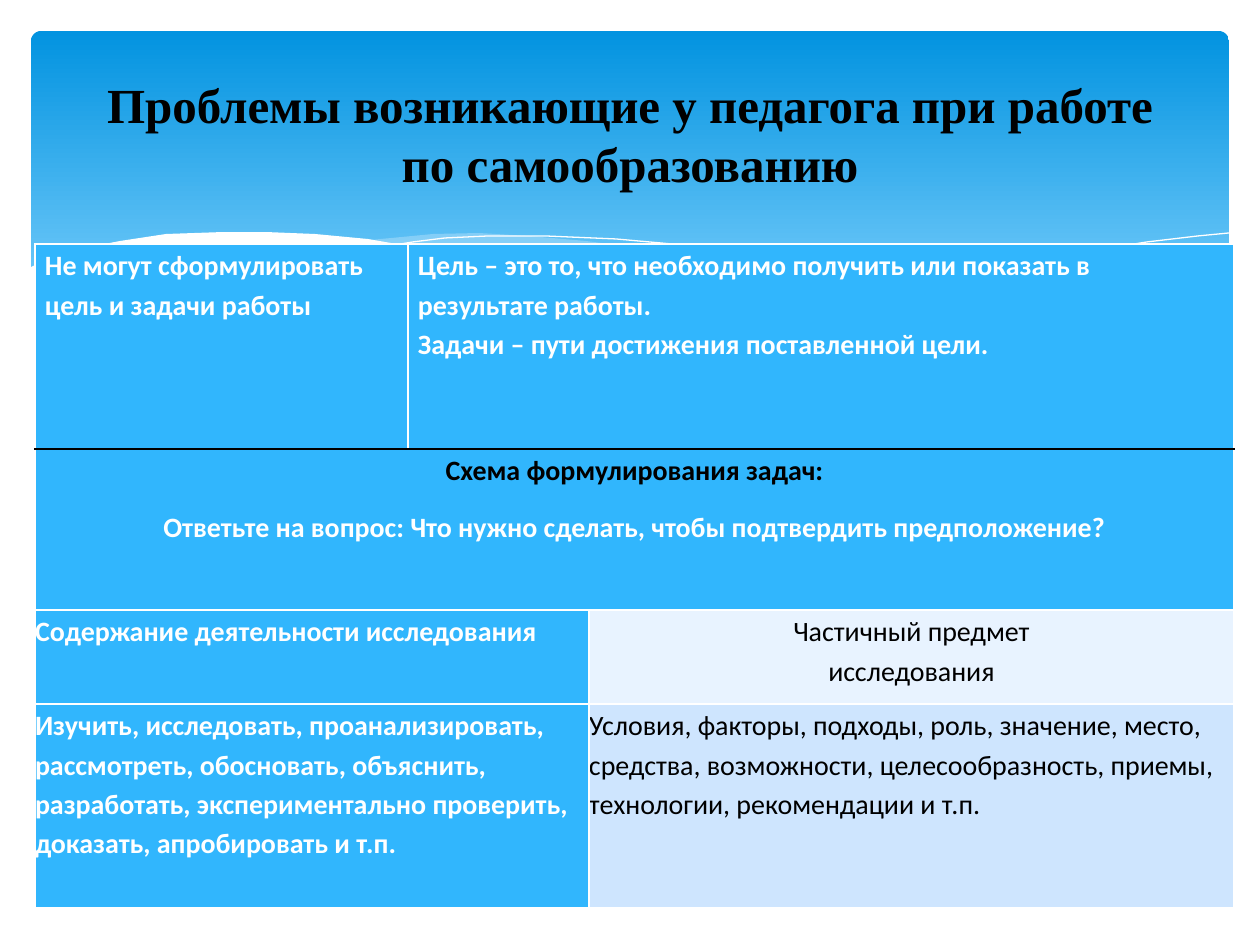
from lxml import etree
from pptx import Presentation
from pptx.dml.color import RGBColor
from pptx.enum.shapes import MSO_SHAPE
from pptx.enum.text import MSO_ANCHOR, PP_ALIGN
from pptx.oxml.ns import qn
from pptx.util import Pt

ROUND = MSO_SHAPE.ROUNDED_RECTANGLE
MIDDLE = MSO_ANCHOR.MIDDLE
LEFT, CENTER = PP_ALIGN.LEFT, PP_ALIGN.CENTER
PX = 914400 / 126
WHITE, BLACK, BLUE = "FFFFFF", "000000", "31B6FD"


def color(code):
    return RGBColor.from_string(code)


def emu(*vals):
    return [round(v * PX) for v in vals]


deck = Presentation()
deck.slide_width, deck.slide_height = emu(1260, 945)
slide = deck.slides.add_slide(deck.slide_layouts[6])
shapes = slide.shapes

# Gradient banner
band = shapes.add_shape(ROUND, *emu(31, 31, 1198, 340))
band.adjustments[0] = 0.03
band.shadow.inherit = False
band.line.fill.background()
band.fill.gradient()
band.fill.gradient_angle = 270
for stop, pos, code in zip(band.fill.gradient_stops, (0, 0.9), ("0293E0", "83D3FE")):
    stop.position = pos
    stop.color.rgb = color(code)

# Waves: points, fill, opacity in percent; no fill means an open white line
waves = [
    ([(1229, 252), (1160, 265), (1085, 281), (949, 312), (833, 334), (906, 343),
      (984, 349), (1063, 349), (1130, 340), (1187, 326), (1230, 311)], "C6E7FC", 29),
    ([(1125, 344), (1017, 328), (890, 302), (793, 280), (717, 262), (648, 249),
      (586, 241), (529, 236), (479, 233), (433, 234), (360, 241), (431, 251),
      (509, 266), (619, 292), (736, 318), (838, 335), (927, 346), (1003, 350),
      (1068, 349)], "C6E7FC", 40),
    ([(389, 246), (413, 242), (445, 238), (488, 236), (546, 236), (616, 239),
      (672, 244), (766, 257), (876, 276), (1002, 304), (1143, 343)], None, 100),
    ([(772, 324), (876, 296), (978, 272), (1091, 251), (1147, 242), (1198, 236),
      (1229, 233)], None, 100),
    ([(1231, 310), (1184, 326), (1103, 344), (1019, 349), (915, 343), (789, 325),
      (667, 301), (563, 277), (460, 255), (368, 239), (315, 234), (266, 232),
      (223, 232), (166, 234), (120, 241), (84, 248), (50, 258), (29, 268),
      (29, 415), (1231, 415)], WHITE, 100),
]
for points, code, alpha in waves:
    path = shapes.build_freeform(*points[0], scale=PX)
    path.add_line_segments(points[1:], close=code is not None)
    wave = path.convert_to_shape()
    wave.shadow.inherit = False
    if code is None:
        wave.fill.background()
        wave.line.color.rgb = color(WHITE)
        wave.line.width = 0
        continue
    wave.line.fill.background()
    wave.fill.solid()
    wave.fill.fore_color.rgb = color(code)
    if alpha < 100:
        tone = wave.fill._xPr.find(".//" + qn("a:srgbClr"))
        etree.SubElement(tone, qn("a:alpha"), val=str(alpha * 1000))

# Table grid
cols, rows = (373, 181, 645), (205, 161, 94, 204)
frame = shapes.add_table(len(rows), len(cols), *emu(35, 244, sum(cols), sum(rows)))
table = frame.table
for col, width in zip(table.columns, emu(*cols)):
    col.width = width
for row, height in zip(table.rows, emu(*rows)):
    row.height = height

# Cell content: row, first and last column, fill, side margin, alignment,
# paragraphs as (lines, colour, bold)
cells = [
    (0, 0, 0, BLUE, 10, LEFT,
     [(["Не могут сформулировать цель и задачи работы"], WHITE, True)]),
    (0, 1, 2, BLUE, 10, LEFT,
     [(["Цель – это то, что необходимо получить или показать в результате работы.",
        "Задачи – пути достижения поставленной цели."], WHITE, True)]),
    (1, 0, 2, BLUE, 10, CENTER,
     [(["Схема формулирования задач:"], BLACK, True),
      (["Ответьте на вопрос: Что нужно сделать, чтобы подтвердить предположение?"],
       WHITE, True)]),
    (2, 0, 1, BLUE, 0, LEFT,
     [(["Содержание деятельности исследования"], WHITE, True)]),
    (2, 2, 2, "E8F3FF", 0, CENTER,
     [(["Частичный предмет", "исследования"], BLACK, False)]),
    (3, 0, 1, BLUE, 0, LEFT,
     [(["Изучить, исследовать, проанализировать, рассмотреть, обосновать, объяснить, "
        "разработать, экспериментально проверить, доказать, апробировать и т.п."],
       WHITE, True)]),
    (3, 2, 2, "CEE5FE", 0, LEFT,
     [(["Условия, факторы, подходы, роль, значение, место, средства, возможности, "
        "целесообразность, приемы, технологии, рекомендации и т.п."], BLACK, False)]),
]
for row, first, last, code, side, align, paras in cells:
    cell = table.cell(row, first)
    if last > first:
        cell.merge(table.cell(row, last))
    cell.margin_left, cell.margin_right = emu(side, side)
    cell.margin_top = cell.margin_bottom = 0
    text = cell.text_frame
    for i, (lines, ink, bold) in enumerate(paras):
        para = text.add_paragraph() if i else text.paragraphs[0]
        para.alignment = align
        para.line_spacing = 1.15
        para.space_after = Pt(10)
        for j, line in enumerate(lines):
            if j:
                para.add_line_break()
            run = para.add_run()
            run.text = line
            run.font.name, run.font.size = "Calibri", Pt(16)
            run.font.bold = bold
            run.font.color.rgb = color(ink)

    # Fill and borders, with a black rule under the first row
    for k in range(first, last + 1):
        part = table.cell(row, k)
        part.fill.solid()
        part.fill.fore_color.rgb = color(code)
        props = part._tc.get_or_add_tcPr()
        for n, edge in enumerate("LRTB"):
            dark = (row, edge) in ((0, "B"), (1, "T"))
            rule = etree.Element(qn("a:ln" + edge), w=str(Pt(1)))
            fill = etree.SubElement(rule, qn("a:solidFill"))
            etree.SubElement(fill, qn("a:srgbClr"), val=BLACK if dark else WHITE)
            props.insert(n, rule)

# Title
title = shapes.add_textbox(*emu(63, 47, 1134, 173)).text_frame
title.word_wrap = True
title.vertical_anchor = MIDDLE
head = title.paragraphs[0]
head.alignment = CENTER
run = head.add_run()
run.text = "Проблемы возникающие у педагога при работе по самообразованию"
run.font.name, run.font.size = "Times New Roman", Pt(28)
run.font.bold = True
run.font.color.rgb = color(BLACK)

deck.save("out.pptx")
